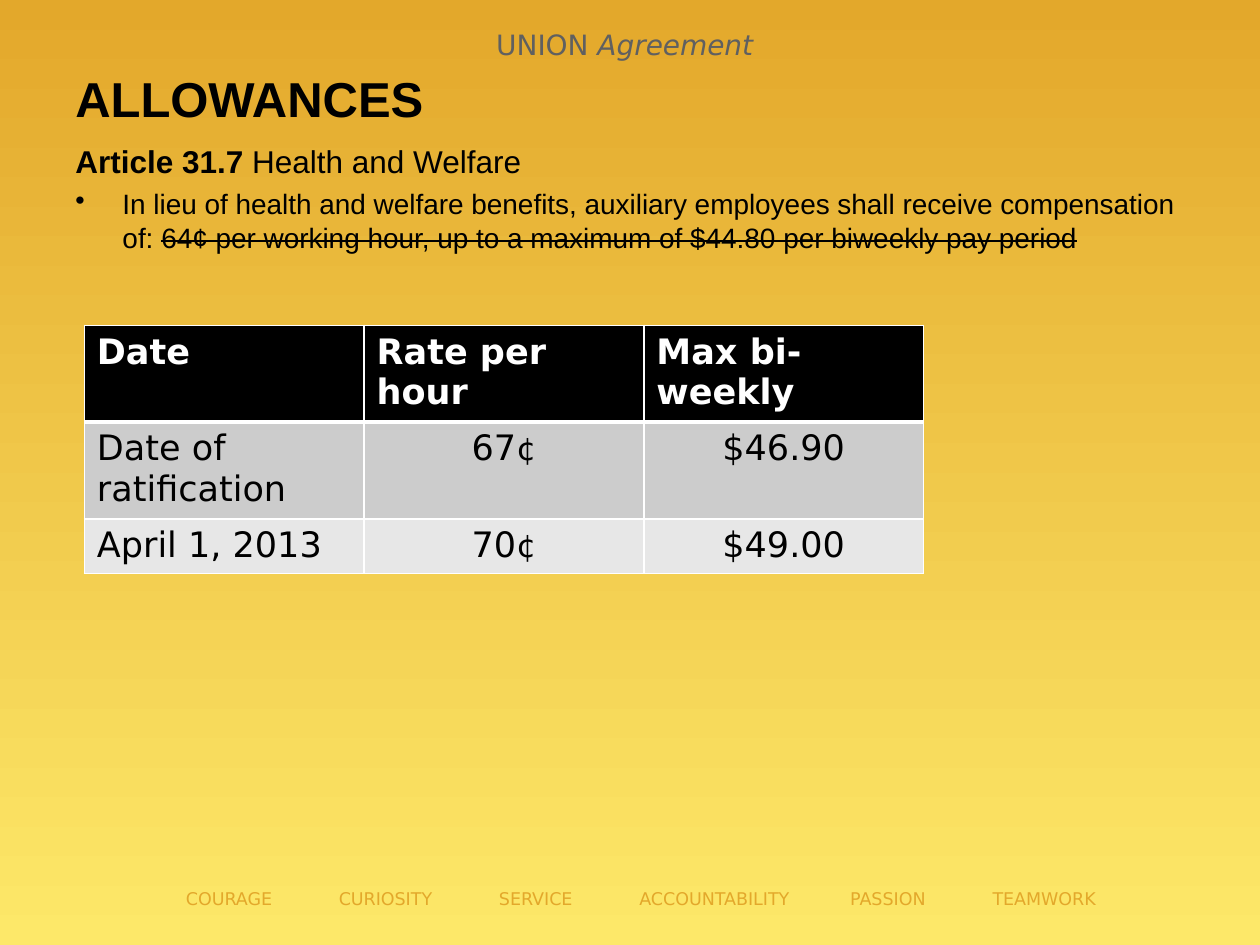
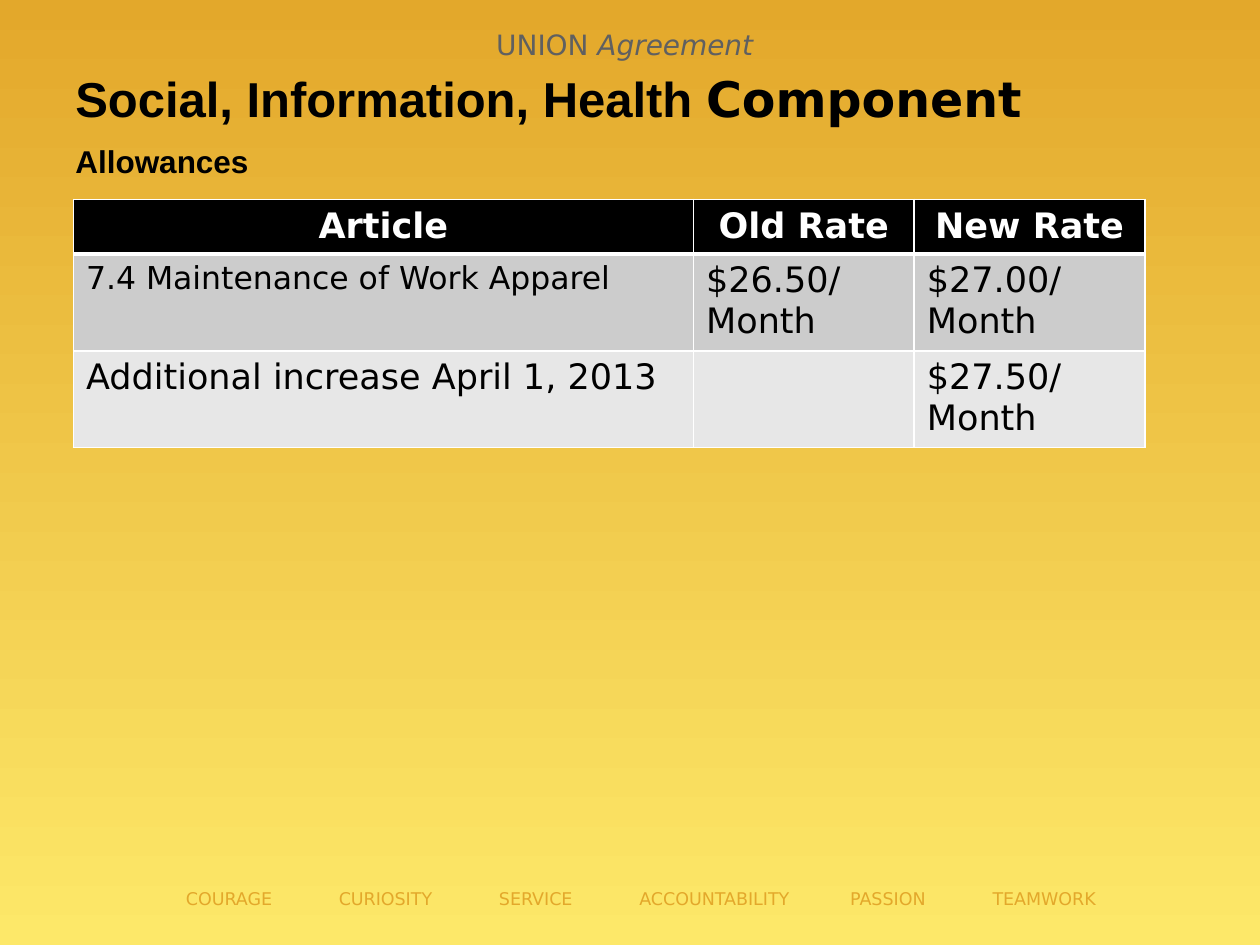
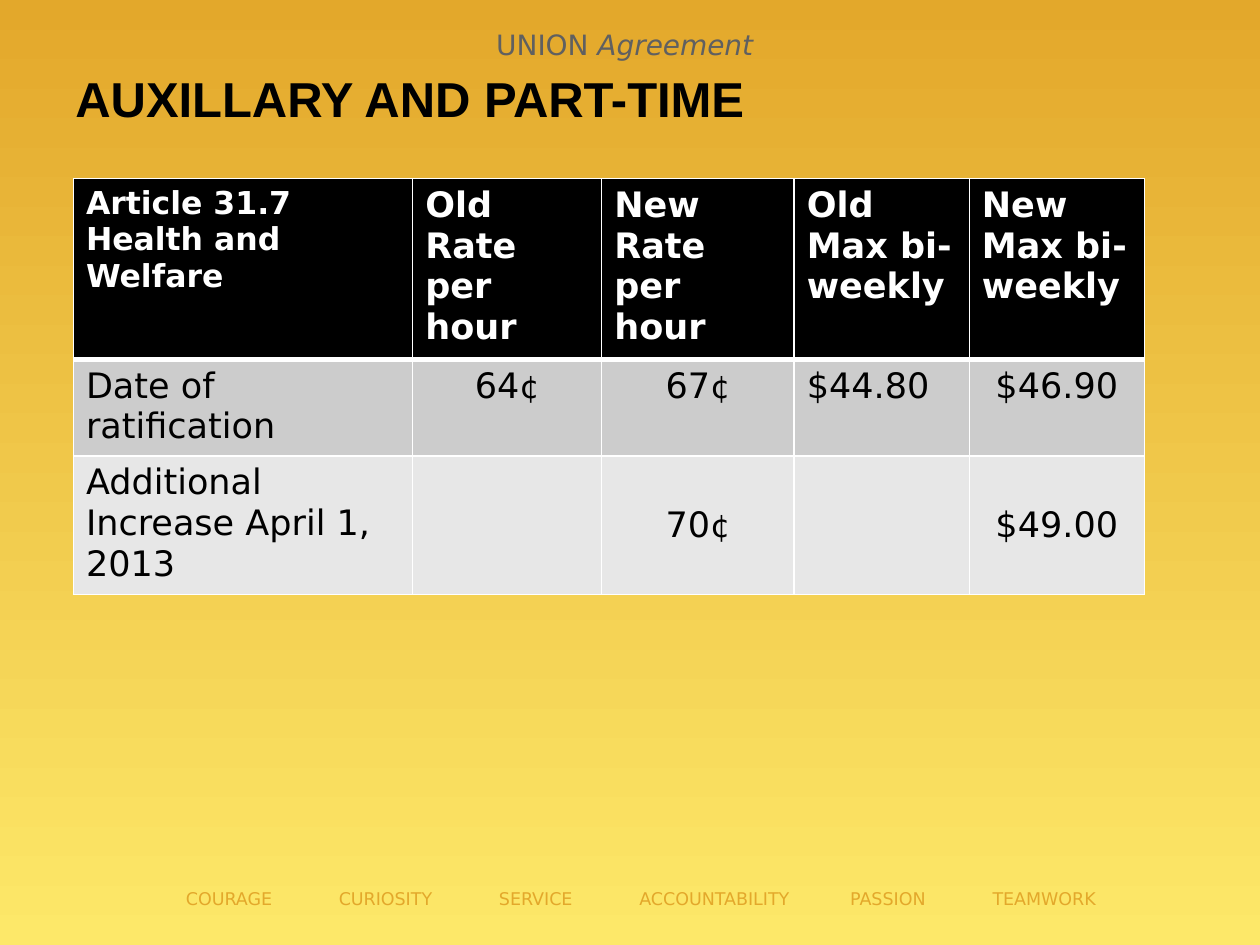
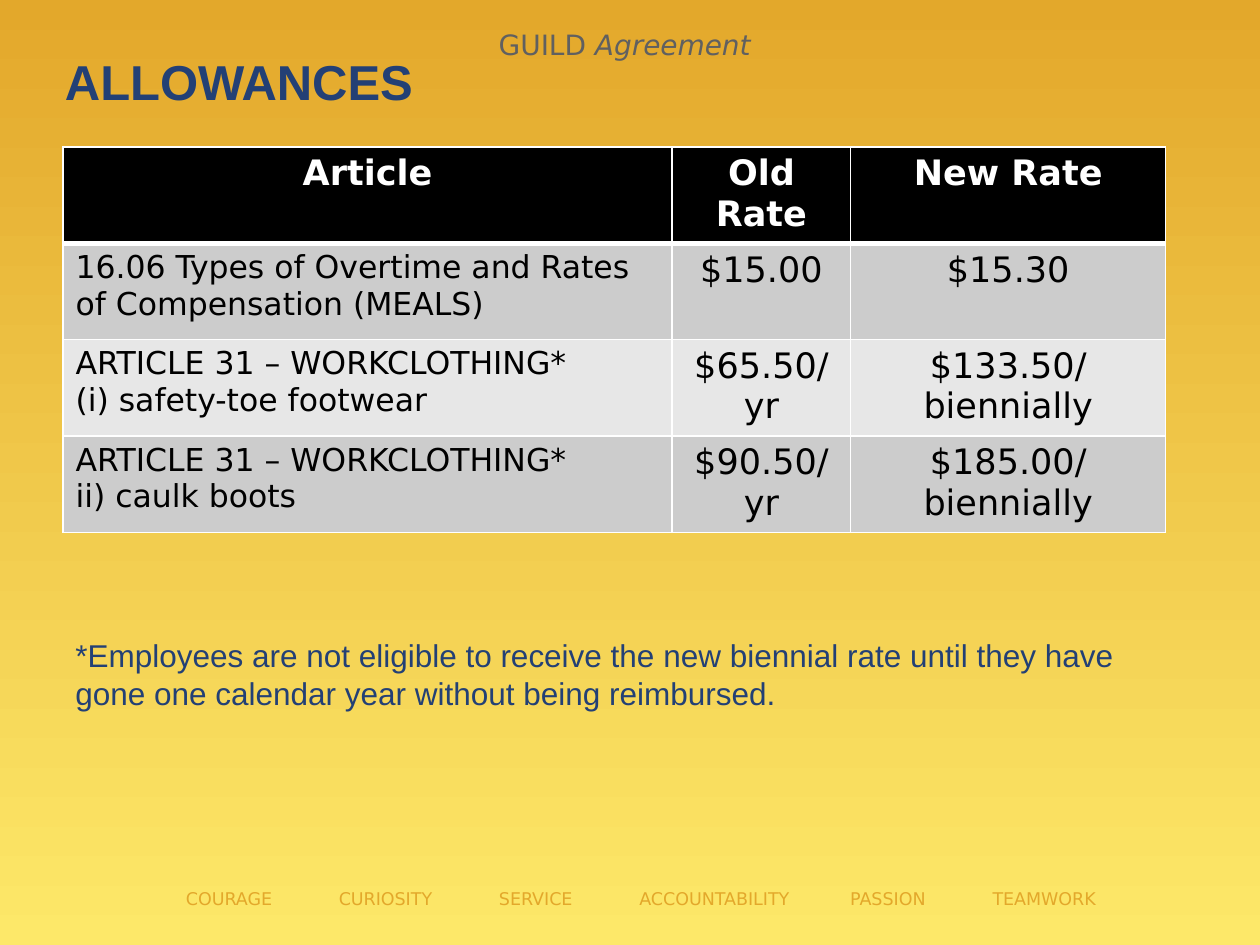
from dataclasses import dataclass

from lxml import etree
from pptx import Presentation
from pptx.dml.color import RGBColor
from pptx.enum.text import MSO_ANCHOR, PP_ALIGN
from pptx.oxml.ns import qn
from pptx.util import Cm, Pt

LEFT, CENTER = PP_ALIGN.LEFT, PP_ALIGN.CENTER
TOP, MIDDLE = MSO_ANCHOR.TOP, MSO_ANCHOR.MIDDLE

AMBER = RGBColor(0xE3, 0xA8, 0x2B)
LEMON = RGBColor(0xFD, 0xE8, 0x69)
BLACK = RGBColor(0x00, 0x00, 0x00)
WHITE = RGBColor(0xFF, 0xFF, 0xFF)
NAVY = RGBColor(0x23, 0x40, 0x75)
GREY = RGBColor(0x60, 0x60, 0x60)
DARK_BAND = RGBColor(0xCC, 0xCC, 0xCC)
LIGHT_BAND = RGBColor(0xE7, 0xE7, 0xE7)

ARIAL, DEJAVU = "Arial", "DejaVu Sans"
ROW_HEIGHT = 1.04
HANGING = 0.95

UNION, GUILD = "UNION", "GUILD"
VALUES = "COURAGE\tCURIOSITY\tSERVICE\tACCOUNTABILITY\tPASSION\tTEAMWORK"
VALUE_TABS = (3.08, 6.31, 9.14, 13.39, 16.26)


@dataclass
class Span:
    text: str
    size: float = 18
    font: str = ARIAL
    color: RGBColor = BLACK
    bold: bool = False
    italic: bool = False
    strike: bool = False


@dataclass
class Para:
    spans: list[Span]
    align: PP_ALIGN = LEFT
    before: float = 0
    hanging: float = 0
    bullet: str = ""


@dataclass
class Place:
    """Left, top, width and height in centimetres."""
    left: float
    top: float
    width: float
    height: float


@dataclass
class Cell:
    text: str = ""
    size: float = 20
    align: PP_ALIGN = LEFT
    anchor: MSO_ANCHOR = TOP


@dataclass
class Grid:
    left: float
    top: float
    columns: list[float]
    rows: list[list[Cell]]
    row_height: float = ROW_HEIGHT


TITLE_PLACE = Place(1.27, 0.76, 22.86, 2.41)
BODY_PLACE = Place(1.27, 2.74, 22.86, 14.27)


def centered(text: str, anchor: MSO_ANCHOR = TOP) -> Cell:
    return Cell(text, align=CENTER, anchor=anchor)


def fill_frame(frame, paras: list[Para]) -> None:
    for index, item in enumerate(paras):
        para = frame.paragraphs[0] if index == 0 else frame.add_paragraph()
        para.alignment = item.align
        para.space_before = Pt(item.before)
        properties = para._p.get_or_add_pPr()
        if item.hanging:
            properties.set("marL", str(Cm(item.hanging)))
            properties.set("indent", str(-Cm(item.hanging)))
        if item.bullet:
            etree.SubElement(properties, qn("a:buChar"), char=item.bullet)
        for span in item.spans:
            run = para.add_run()
            run.text = span.text
            font = run.font
            font.name, font.size = span.font, Pt(span.size)
            font.bold, font.italic = span.bold, span.italic
            font.color.rgb = span.color
            if span.strike:
                run._r.get_or_add_rPr().set("strike", "sngStrike")


def add_text(page, place: Place, paras: list[Para], anchor: MSO_ANCHOR = TOP):
    box = page.shapes.add_textbox(Cm(place.left), Cm(place.top), Cm(place.width), Cm(place.height))
    frame = box.text_frame
    frame.word_wrap = True
    frame.vertical_anchor = anchor
    fill_frame(frame, paras)
    return frame


def add_title(page, *spans: Span, place: Place = TITLE_PLACE) -> None:
    add_text(page, place, [Para(list(spans))], MIDDLE)


def title_span(text: str, font: str = ARIAL, color: RGBColor = BLACK) -> Span:
    return Span(text, 28, font, color, bold=True)


def add_footer(page) -> None:
    """Write the values in one line, spaced by tab stops."""
    line = Para([Span(VALUES, 10, DEJAVU, AMBER)])
    frame = add_text(page, Place(1.27, 17.78, 23.29, 0.69), [line])
    frame.margin_left = Cm(2.48)
    tabs = etree.SubElement(frame.paragraphs[0]._p.get_or_add_pPr(), qn("a:tabLst"))
    for position in VALUE_TABS:
        etree.SubElement(tabs, qn("a:tab"), pos=str(Cm(position)), algn="l")


def add_page(deck, agreement: str):
    page = deck.slides.add_slide(deck.slide_layouts[6])
    fill = page.background.fill
    fill.gradient()
    fill.gradient_angle = 270
    for stop, color in zip(fill.gradient_stops, (AMBER, LEMON)):
        stop.color.rgb = color
    header = Para([Span(agreement, 16, DEJAVU, GREY),
                   Span(" Agreement", 16, DEJAVU, GREY, italic=True)], CENTER)
    add_text(page, Place(9.1, 0.43, 6.99, 0.94), [header])
    add_footer(page)
    return page


def set_borders(cell, top: float, bottom: float) -> None:
    properties = cell._tc.get_or_add_tcPr()
    for side, width in (("L", 1), ("R", 1), ("T", top), ("B", bottom)):
        line = etree.SubElement(properties, qn(f"a:ln{side}"), w=str(Pt(width)))
        solid = etree.SubElement(line, qn("a:solidFill"))
        etree.SubElement(solid, qn("a:srgbClr"), val=str(WHITE))


def cell_paras(item: Cell, color: RGBColor, bold: bool) -> list[Para]:
    """One paragraph a line, with any cent sign in a smaller size."""
    paras = []
    for line in item.text.splitlines():
        amount, cent, _ = line.partition("¢")
        spans = [Span(amount, item.size, DEJAVU, color, bold)]
        if cent:
            spans.append(Span(cent, 18, DEJAVU, color, bold))
        paras.append(Para(spans, item.align))
    return paras


def add_grid(page, grid: Grid) -> None:
    table = page.shapes.add_table(
        len(grid.rows), len(grid.columns), Cm(grid.left), Cm(grid.top),
        Cm(sum(grid.columns)), Cm(grid.row_height * len(grid.rows))).table
    for column, width in zip(table.columns, grid.columns):
        column.width = Cm(width)
    for row_index, items in enumerate(grid.rows):
        is_header = row_index == 0
        band = BLACK if is_header else DARK_BAND if row_index % 2 else LIGHT_BAND
        for column_index, item in enumerate(items):
            cell = table.cell(row_index, column_index)
            set_borders(cell, top=3 if row_index == 1 else 1, bottom=3 if is_header else 1)
            cell.fill.solid()
            cell.fill.fore_color.rgb = band
            cell.vertical_anchor = item.anchor
            fill_frame(cell.text_frame,
                       cell_paras(item, WHITE if is_header else BLACK, is_header))


def build_health_allowances(deck) -> None:
    page = add_page(deck, UNION)
    add_title(page, title_span("ALLOWANCES"))
    add_text(page, BODY_PLACE, [
        Para([Span("Article 31.7 ", bold=True), Span("Health and Welfare")],
             before=2, hanging=HANGING),
        Para([Span("In lieu of health and welfare benefits, auxiliary employees "
                   "shall receive compensation of: ", 16),
              Span("64¢ per working hour, up to a maximum of $44.80 per biweekly pay period",
                   16, strike=True)],
             before=4, hanging=HANGING, bullet="•"),
    ])
    add_grid(page, Grid(1.7, 6.56, [5.64] * 3, [
        [Cell("Date"), Cell("Rate per hour"), Cell("Max bi-weekly")],
        [Cell("Date of ratification"), centered("67¢"), centered("$46.90")],
        [Cell("April 1, 2013"), centered("70¢"), centered("$49.00")],
    ]))


def build_component(deck) -> None:
    page = add_page(deck, UNION)
    add_title(page, title_span("Social, Information, Health "), title_span("Component", DEJAVU))
    add_text(page, BODY_PLACE,
             [Para([Span("Allowances", bold=True)], before=2, hanging=HANGING)])
    add_grid(page, Grid(1.48, 4.02, [12.5, 4.45, 4.65], [
        [centered("Article"), centered("Old Rate"), centered("New Rate")],
        [Cell("7.4 Maintenance of Work Apparel", 18), Cell("$26.50/Month"), Cell("$27.00/Month")],
        [Cell("Additional increase April 1, 2013"), Cell(), Cell("$27.50/Month")],
    ]))


def build_part_time(deck) -> None:
    page = add_page(deck, UNION)
    add_title(page, title_span("AUXILLARY AND PART-TIME"))
    add_grid(page, Grid(1.48, 3.6, [6.84, 3.81, 3.88, 3.53, 3.53], [
        [Cell("Article 31.7 Health and Welfare", 18), Cell("Old Rate per hour"),
         Cell("New Rate per hour"), Cell("Old Max bi-weekly"), Cell("New Max bi-weekly")],
        [Cell("Date of ratification"), centered("64¢"), centered("67¢"),
         Cell("$44.80"), centered("$46.90")],
        [Cell("Additional Increase April 1, 2013"), Cell(), centered("70¢", MIDDLE),
         Cell(), centered("$49.00", MIDDLE)],
    ]))


def build_clothing_allowances(deck) -> None:
    page = add_page(deck, GUILD)
    add_title(page, title_span("ALLOWANCES", color=NAVY), place=Place(1.06, 0.43, 22.86, 2.41))
    clothing = "ARTICLE 31 – WORKCLOTHING*\n"
    add_grid(page, Grid(1.27, 2.96, [12.28, 3.6, 6.35], [
        [centered("Article"), centered("Old Rate"), centered("New Rate")],
        [Cell("16.06 Types of Overtime and Rates of Compensation (MEALS)", 18),
         centered("$15.00"), centered("$15.30")],
        [Cell(clothing + "(i) safety-toe footwear", 18),
         centered("$65.50/yr"), centered("$133.50/biennially")],
        [Cell(clothing + "ii) caulk boots", 18),
         centered("$90.50/yr"), centered("$185.00/biennially")],
    ], row_height=1.93))
    add_text(page, Place(1.27, 12.7, 21.59, 1.8), [Para([Span(
        "*Employees are not eligible to receive the new biennial rate until they have "
        "gone one calendar year without being reimbursed.", color=NAVY)])])


def main() -> None:
    deck = Presentation()
    deck.slide_width, deck.slide_height = Cm(25.4), Cm(19.05)
    build_health_allowances(deck)
    build_component(deck)
    build_part_time(deck)
    build_clothing_allowances(deck)
    deck.save("out.pptx")


if __name__ == "__main__":
    main()
